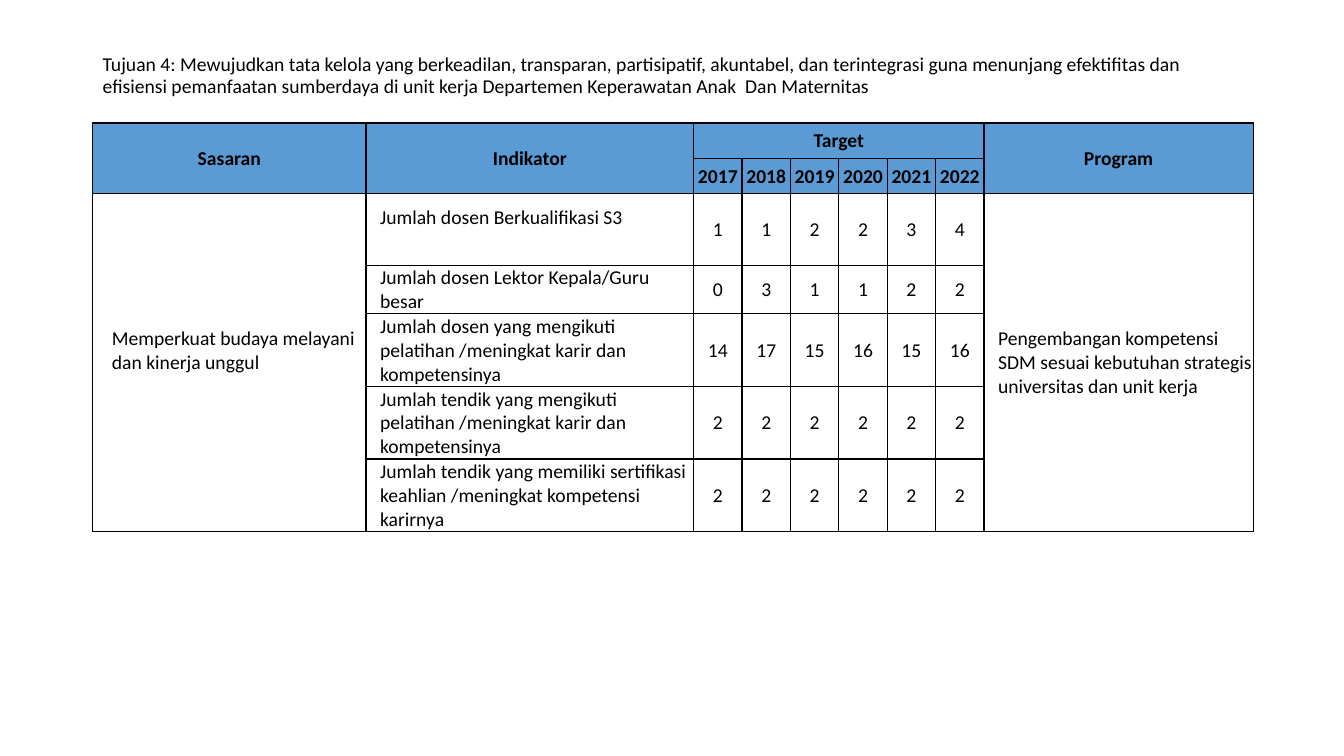
import pptx
import pptx.util
import pptx.dml.color
import pptx.enum.text
import pptx.oxml
import pptx.oxml.ns
from pptx.util import Inches

# Content
GOAL = ("Tujuan 4: Mewujudkan tata kelola yang berkeadilan, transparan, partisipatif, "
        "akuntabel, dan terintegrasi guna menunjang efektifitas dan efisiensi pemanfaatan "
        "sumberdaya di unit kerja Departemen Keperawatan Anak  Dan Maternitas")
YEARS = list(range(2017, 2023))
SASARAN = "Memperkuat budaya melayani dan kinerja unggul"
PROGRAM = "Pengembangan kompetensi SDM sesuai kebutuhan strategis universitas dan unit kerja"
INDICATORS = [  # indicator, yearly targets, row height
    ("Jumlah dosen Berkualifikasi S3", [1, 1, 2, 2, 3, 4], 0.71),
    ("Jumlah dosen Lektor Kepala/Guru besar", [0, 3, 1, 1, 2, 2], 0.48),
    ("Jumlah dosen yang mengikuti pelatihan /meningkat karir dan kompetensinya",
     [14, 17, 15, 16, 15, 16], 0.72),
    ("Jumlah tendik yang mengikuti pelatihan /meningkat karir dan kompetensinya",
     [2] * 6, 0.72),
    ("Jumlah tendik yang memiliki sertifikasi keahlian /meningkat kompetensi karirnya",
     [2] * 6, 0.72),
]

THEME = {
    "font": "Calibri",
    "size": pptx.util.Pt(14),
    "text": pptx.dml.color.RGBColor.from_string("000000"),
    "header": pptx.dml.color.RGBColor.from_string("5B9BD5"),
    "border": "000000",
    "border_width": pptx.util.Pt(1),
}
ALIGN = pptx.enum.text.PP_ALIGN
MIDDLE = pptx.enum.text.MSO_ANCHOR.MIDDLE

# Layout
LEFT, WIDTH = 0.92, 11.5
GOAL_TOP, GOAL_HEIGHT, TABLE_TOP = 0.4, 0.71, 1.22
COLUMNS = [2.71, 3.25] + [0.48] * len(YEARS) + [2.67]
ROWS = [0.35, 0.35] + [height for _, _, height in INDICATORS]
FIRST_YEAR, LAST_YEAR, PROGRAM_COLUMN = 2, 1 + len(YEARS), 2 + len(YEARS)
LAST_ROW = len(ROWS) - 1
INDENT, SASARAN_INDENT = 0.13, 0.18
LINE = 0.24  # one text line, lifts a text above the cell's middle


def set_all(target, values):
    for name, value in values.items():
        setattr(target, name, value)


def write(paragraph, text, align=ALIGN.LEFT, bold=False):
    paragraph.text = text
    paragraph.alignment = align
    set_all(paragraph.font, {"name": THEME["font"], "size": THEME["size"], "bold": bold})
    paragraph.font.color.rgb = THEME["text"]


def add_borders(cell):
    properties = cell._tc.get_or_add_tcPr()
    for position, side in enumerate(("lnL", "lnR", "lnT", "lnB")):
        properties.insert(position, pptx.oxml.parse_xml(
            f'<a:{side} {pptx.oxml.ns.nsdecls("a")} w="{THEME["border_width"]}">'
            f'<a:solidFill><a:srgbClr val="{THEME["border"]}"/></a:solidFill></a:{side}>'))


def fill_cell(cell, text, indent=None, header=False, lift=0):
    write(cell.text_frame.paragraphs[0], text,
          ALIGN.CENTER if indent is None else ALIGN.LEFT, header)
    if indent is not None:
        layout = cell.text_frame.paragraphs[0]._p.get_or_add_pPr()
        layout.set("marL", str(Inches(indent)))
        layout.set("indent", "0")
    cell.margin_bottom = Inches(lift)


def add_goal(slide):
    frame = slide.shapes.add_textbox(Inches(LEFT), Inches(GOAL_TOP),
                                     Inches(WIDTH), Inches(GOAL_HEIGHT)).text_frame
    set_all(frame, {"word_wrap": True, "vertical_anchor": MIDDLE})
    write(frame.paragraphs[0], GOAL)
    frame.paragraphs[0].line_spacing = 0.9


def add_targets(slide):
    table = slide.shapes.add_table(
        len(ROWS), len(COLUMNS), Inches(LEFT), Inches(TABLE_TOP),
        Inches(WIDTH), Inches(sum(ROWS))).table
    set_all(table, {"first_row": False, "horz_banding": False})
    for column, width in zip(table.columns, COLUMNS):
        column.width = Inches(width)
    for row, height in zip(table.rows, ROWS):
        row.height = Inches(height)

    # Fills, margins and borders
    for r in range(len(ROWS)):
        for c in range(len(COLUMNS)):
            cell = table.cell(r, c)
            set_all(cell, {"vertical_anchor": MIDDLE, "margin_left": Inches(0.01),
                           "margin_right": Inches(0.01), "margin_top": Inches(0.01),
                           "margin_bottom": 0})
            if r < 2:
                cell.fill.solid()
                cell.fill.fore_color.rgb = THEME["header"]
            else:
                cell.fill.background()
            add_borders(cell)

    # Merged areas
    for c in (0, 1, PROGRAM_COLUMN):
        table.cell(0, c).merge(table.cell(1, c))
    table.cell(0, FIRST_YEAR).merge(table.cell(0, LAST_YEAR))
    for c in (0, PROGRAM_COLUMN):
        table.cell(2, c).merge(table.cell(LAST_ROW, c))

    # Header
    for c, heading in ((0, "Sasaran"), (1, "Indikator"),
                       (FIRST_YEAR, "Target"), (PROGRAM_COLUMN, "Program")):
        fill_cell(table.cell(0, c), heading, header=True)
    for c, year in enumerate(YEARS, FIRST_YEAR):
        fill_cell(table.cell(1, c), str(year), header=True)

    # Body
    fill_cell(table.cell(2, 0), SASARAN, SASARAN_INDENT, lift=LINE)
    fill_cell(table.cell(2, PROGRAM_COLUMN), PROGRAM, INDENT)
    for r, (indicator, targets, _) in enumerate(INDICATORS, 2):
        fill_cell(table.cell(r, 1), indicator, INDENT, lift=LINE if r == 2 else 0)
        for c, target in enumerate(targets, FIRST_YEAR):
            fill_cell(table.cell(r, c), str(target))


def main():
    deck = pptx.Presentation()
    set_all(deck, {"slide_width": Inches(13.33), "slide_height": Inches(7.5)})
    slide = deck.slides.add_slide(deck.slide_layouts[6])
    add_targets(slide)
    add_goal(slide)
    deck.save("out.pptx")


if __name__ == "__main__":
    main()
